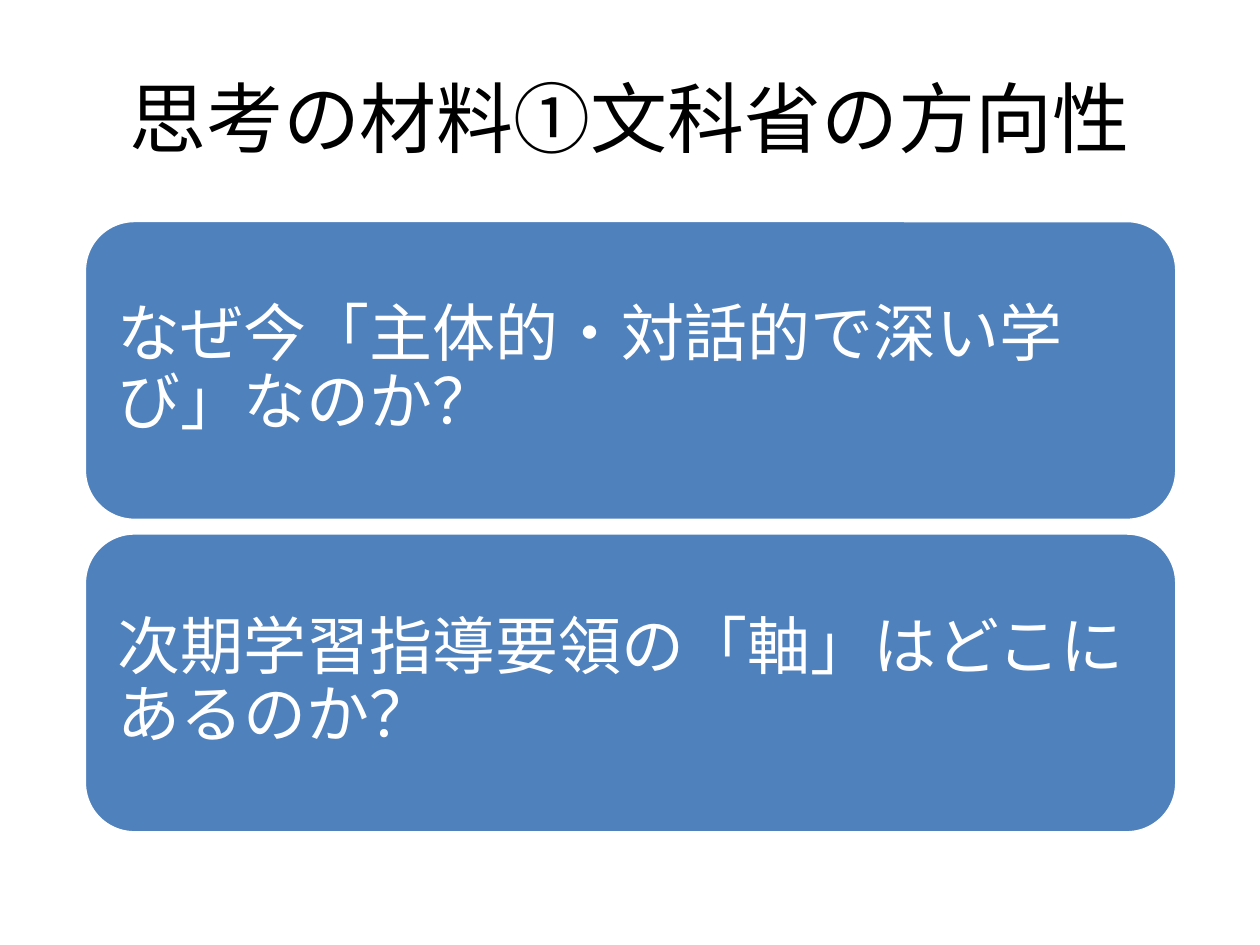
from pptx import Presentation
from pptx.dml.color import RGBColor
from pptx.enum.shapes import MSO_SHAPE
from pptx.enum.text import MSO_ANCHOR, PP_ALIGN
from pptx.util import Inches, Pt

FONT = "Cabin"
WHITE, BLACK, BLUE = "FFFFFF", "000000", "4F81BD"

QUESTIONS = [
    "なぜ今「主体的・対話的で深い学び」なのか？",
    "次期学習指導要領の「軸」はどこにあるのか？",
]
CARD_LEFT, CARD_TOP = 0.67, 1.75
CARD_WIDTH, CARD_HEIGHT = 8.67, 2.38
CARD_STEP = 2.48


def color(hex_string):
    return RGBColor.from_string(hex_string)


def write_text(shape, text, *, size, hex_color, align=PP_ALIGN.LEFT,
               line_spacing=1.0, side_inset=0.1, end_inset=0.05):
    frame = shape.text_frame
    frame.word_wrap = True
    frame.vertical_anchor = MSO_ANCHOR.MIDDLE
    frame.margin_left = frame.margin_right = Inches(side_inset)
    frame.margin_top = frame.margin_bottom = Inches(end_inset)
    paragraph = frame.paragraphs[0]
    paragraph.alignment = align
    paragraph.line_spacing = line_spacing
    run = paragraph.add_run()
    run.text = text
    run.font.name = FONT
    run.font.size = Pt(size)
    run.font.color.rgb = color(hex_color)


def add_title(slide, text):
    box = slide.shapes.add_textbox(Inches(0.5), Inches(0.3), Inches(9), Inches(1.25))
    write_text(box, text, size=44, hex_color=BLACK, align=PP_ALIGN.CENTER)


def add_question_card(slide, text, top):
    card = slide.shapes.add_shape(
        MSO_SHAPE.ROUNDED_RECTANGLE,
        Inches(CARD_LEFT), Inches(top), Inches(CARD_WIDTH), Inches(CARD_HEIGHT))
    card.shadow.inherit = False
    card.fill.solid()
    card.fill.fore_color.rgb = color(BLUE)
    card.line.color.rgb = color(WHITE)
    card.line.width = Pt(2)
    write_text(card, text, size=36, hex_color=WHITE, line_spacing=0.9,
               side_inset=0.15, end_inset=0.15)
    # Space after each question, in proportion to its text size
    card.text_frame.paragraphs[0].space_after = Pt(12.6)


def main():
    presentation = Presentation()
    presentation.slide_width = Inches(10)
    presentation.slide_height = Inches(7.5)
    slide = presentation.slides.add_slide(presentation.slide_layouts[6])

    # Heading
    add_title(slide, "思考の材料①文科省の方向性")

    # Stacked question cards
    for index, question in enumerate(QUESTIONS):
        add_question_card(slide, question, CARD_TOP + index * CARD_STEP)

    presentation.save("out.pptx")


if __name__ == "__main__":
    main()
